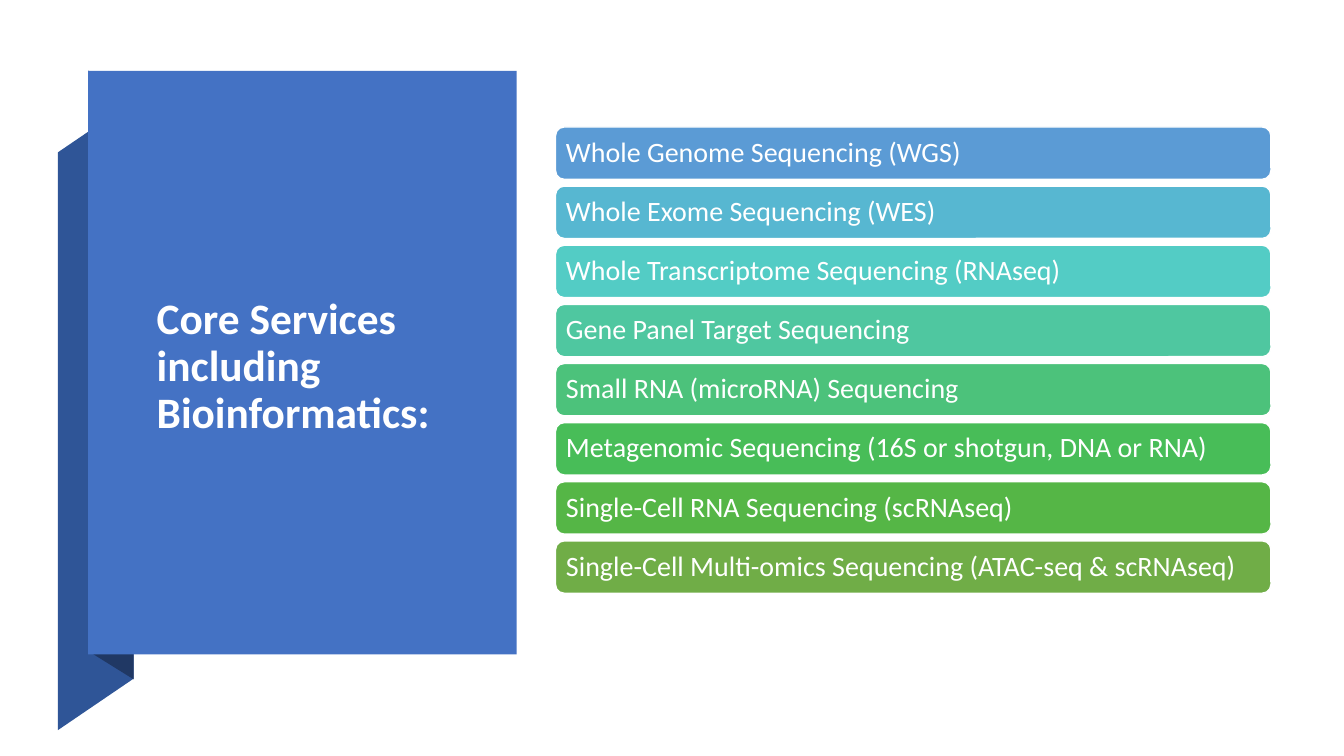
from pptx import Presentation
from pptx.dml.color import RGBColor
from pptx.enum.shapes import MSO_SHAPE
from pptx.enum.text import MSO_ANCHOR, PP_ALIGN
from pptx.util import Cm, Pt

COLORS = {
    "white": "FFFFFF",
    "panel": "4472C4",
    "ribbon": "2F5597",
    "fold": "203864",
}
SERVICES = [
    ("Whole Genome Sequencing (WGS)", "5B9BD5"),
    ("Whole Exome Sequencing (WES)", "57B7D1"),
    ("Whole Transcriptome Sequencing (RNAseq)", "53CCC5"),
    ("Gene Panel Target Sequencing", "4FC7A0"),
    ("Small RNA (microRNA) Sequencing", "4CC27B"),
    ("Metagenomic Sequencing (16S or shotgun, DNA or RNA)", "48BD58"),
    ("Single-Cell RNA Sequencing (scRNAseq)", "55B646"),
    ("Single-Cell Multi-omics Sequencing (ATAC-seq & scRNAseq)", "70AD47"),
]


def paint(sp, color):
    sp.shadow.inherit = False
    sp.fill.solid()
    sp.fill.fore_color.rgb = RGBColor.from_string(color)
    sp.line.fill.background()


def write(sp, text, size, bold=False):
    tf = sp.text_frame
    tf.word_wrap = True
    tf.vertical_anchor = MSO_ANCHOR.MIDDLE
    p = tf.paragraphs[0]
    p.text = text
    p.alignment = PP_ALIGN.LEFT
    p.line_spacing = 0.9
    p.font.name = "Calibri"
    p.font.size = Pt(size)
    p.font.bold = bold
    p.font.color.rgb = RGBColor.from_string(COLORS["white"])


prs = Presentation()
prs.slide_width, prs.slide_height = Cm(33.87), Cm(19.05)
s = prs.slides.add_slide(prs.slide_layouts[6])

# Folded ribbon behind the panel
ribbon_parts = [
    ("ribbon", [(1.46, 18.4), (3.37, 17.1), (3.37, 2.54), (1.46, 3.84)]),
    ("fold", [(2.23, 16.41), (3.37, 17.12), (3.37, 2.51), (2.23, 1.78)]),
]
for color, points in ribbon_parts:
    start, *rest = [(Cm(x), Cm(y)) for x, y in points]
    builder = s.shapes.build_freeform(*start, scale=1.0)
    builder.add_line_segments(rest, close=True)
    paint(builder.convert_to_shape(), COLORS[color])

# Title panel
panel = s.shapes.add_shape(MSO_SHAPE.RECTANGLE, Cm(2.22), Cm(1.79), Cm(10.8), Cm(14.7))
paint(panel, COLORS["panel"])
title = s.shapes.add_textbox(Cm(3.7), Cm(4.25), Cm(7.65), Cm(10))
write(title, "Core Services including Bioinformatics:", 31, bold=True)

# Service bars
BAR_TOP, BAR_PITCH = 3.2, 1.49
for i, (service, color) in enumerate(SERVICES):
    bar = s.shapes.add_shape(MSO_SHAPE.ROUNDED_RECTANGLE, Cm(14),
                             Cm(BAR_TOP + i * BAR_PITCH), Cm(18.03), Cm(1.32))
    paint(bar, color)
    bar.line.color.rgb = RGBColor.from_string(COLORS["white"])
    bar.line.width = Pt(1)
    write(bar, service, 20)
    tf = bar.text_frame
    tf.margin_left = tf.margin_right = tf.margin_top = tf.margin_bottom = Cm(0.2)

prs.save("out.pptx")
